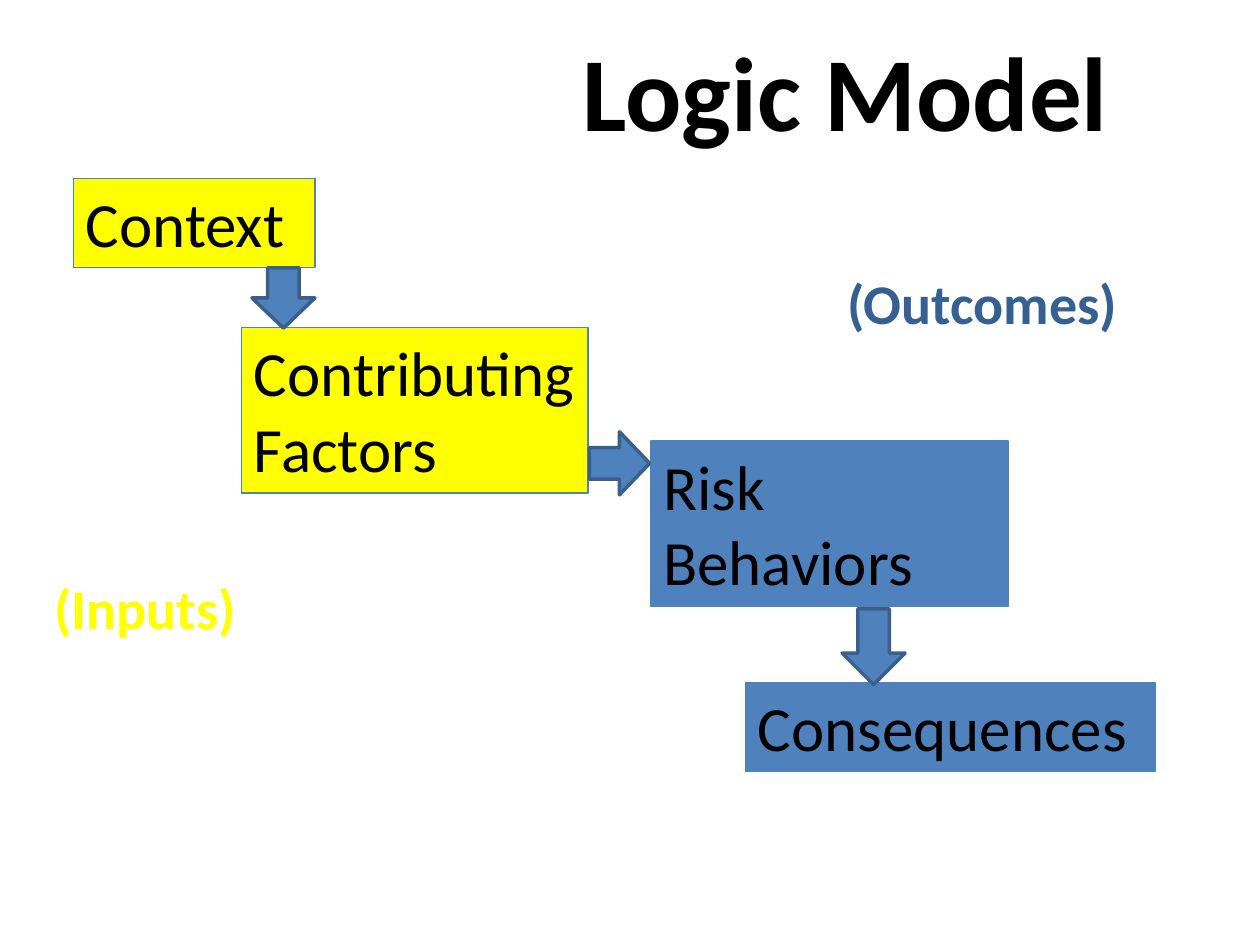
from pptx import Presentation
from pptx import util as u
from pptx.dml.color import RGBColor
from pptx.enum import shapes, text

BLACK = RGBColor(0x00, 0x00, 0x00)
YELLOW = RGBColor(0xFF, 0xFF, 0x00)
BLUE = RGBColor(0x4F, 0x81, 0xBD)
NAVY = RGBColor(0x37, 0x60, 0x92)
EDGE = RGBColor(0x3A, 0x5F, 0x8C)

prs = Presentation()
prs.slide_width, prs.slide_height = u.Inches(10), u.Inches(7.5)
s = prs.slides.add_slide(prs.slide_layouts[6])

# Grid of 120 columns by 90 rows
COL, ROW = prs.slide_width / 120, prs.slide_height / 90


def place(col, row, cols, rows):
    return [round(n) for n in (col * COL, row * ROW, cols * COL, rows * ROW)]


def write(sp, words, size, color, bold=False, align=text.PP_ALIGN.LEFT):
    tf = sp.text_frame
    tf.word_wrap = True
    tf.vertical_anchor = text.MSO_ANCHOR.TOP
    p = tf.paragraphs[0]
    p.alignment = align
    r = p.add_run()
    r.text = words
    r.font.name, r.font.size, r.font.bold = "Calibri", u.Pt(size), bold
    r.font.color.rgb = color
    return tf


# Title
sp = s.shapes.add_textbox(*place(50, 1, 61, 15))
tf = write(sp, "Logic Model", 60, BLACK, True, text.PP_ALIGN.CENTER)
tf.vertical_anchor = text.MSO_ANCHOR.MIDDLE

# Model steps
for words, fill, at in [
    ("Context", YELLOW, (7, 17, 23, 8.5)),
    ("Contributing Factors", YELLOW, (23, 31.2, 33, 15.75)),
    ("Risk Behaviors", BLUE, (62, 42, 34, 15.75)),
    ("Consequences", BLUE, (71, 65, 39, 8.5)),
]:
    sp = s.shapes.add_shape(shapes.MSO_SHAPE.RECTANGLE, *place(*at))
    sp.shadow.inherit = False
    sp.fill.solid()
    sp.fill.fore_color.rgb = fill
    sp.line.color.rgb = BLUE
    sp.line.width = u.Pt(0.75)
    tf = write(sp, words, 36, BLACK)
    tf.auto_size = text.MSO_AUTO_SIZE.SHAPE_TO_FIT_TEXT

# Arrows between steps
for at, turn in [
    ((24, 25.5, 6, 5.75), 0),
    ((56, 41.25, 6, 5.75), 270),
    ((80.2, 58, 6, 7.2), 0),
]:
    sp = s.shapes.add_shape(shapes.MSO_SHAPE.DOWN_ARROW, *place(*at))
    sp.shadow.inherit = False
    sp.rotation = turn
    sp.fill.solid()
    sp.fill.fore_color.rgb = BLUE
    sp.line.color.rgb = EDGE
    sp.line.width = u.Pt(2)

# Group labels
for words, color, at in [
    ("(Outcomes)", NAVY, (79.5, 25, 29.6, 7.7)),
    ("(Inputs)", YELLOW, (4, 54, 22, 7.7)),
]:
    sp = s.shapes.add_textbox(*place(*at))
    tf = write(sp, words, 32, color, True)
    tf.auto_size = text.MSO_AUTO_SIZE.SHAPE_TO_FIT_TEXT

prs.save("out.pptx")
